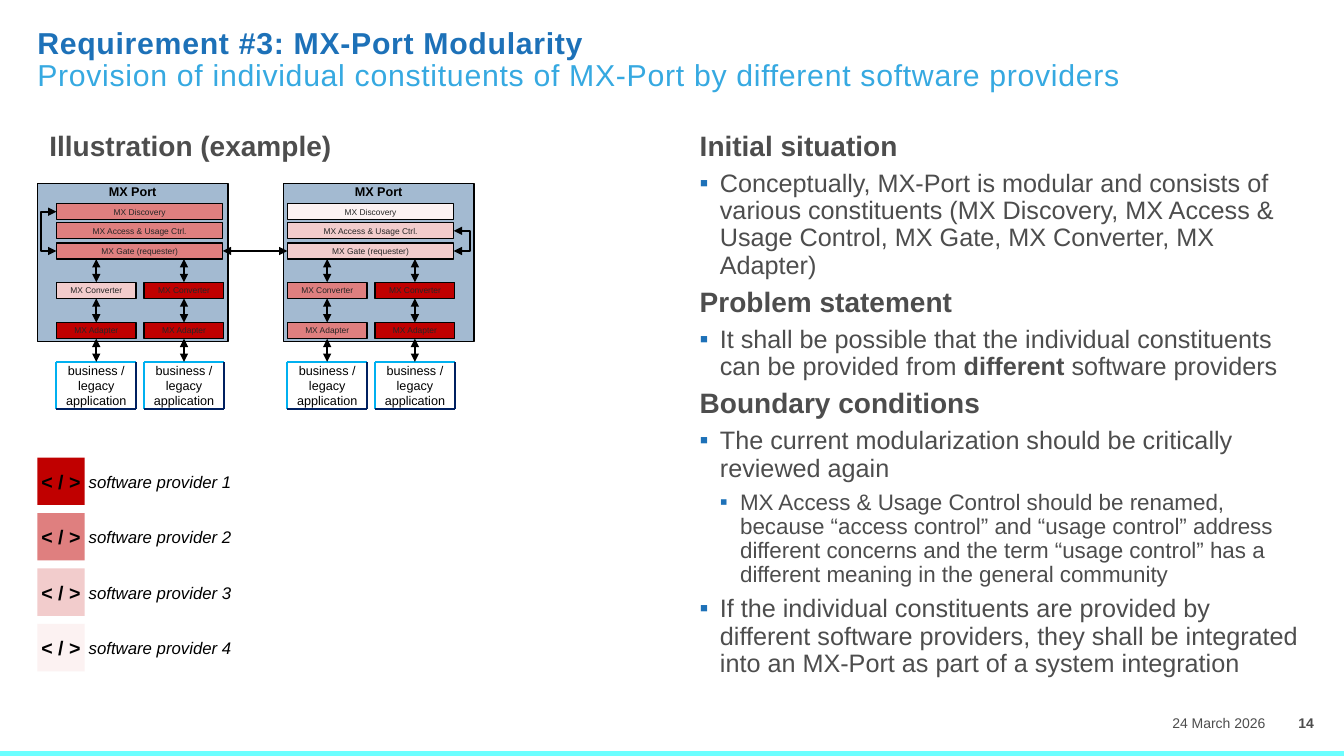
from pptx import Presentation
from pptx.dml.color import RGBColor
from pptx.enum.shapes import MSO_CONNECTOR, MSO_SHAPE
from pptx.enum.text import MSO_ANCHOR, MSO_AUTO_SIZE, PP_ALIGN
from pptx.oxml.ns import qn
from pptx.util import Inches, Pt
from lxml import etree

RECTANGLE = MSO_SHAPE.RECTANGLE
STRAIGHT = MSO_CONNECTOR.STRAIGHT
TOP, MIDDLE = MSO_ANCHOR.TOP, MSO_ANCHOR.MIDDLE
LEFT, CENTER, RIGHT = PP_ALIGN.LEFT, PP_ALIGN.CENTER, PP_ALIGN.RIGHT
NO_FIT = MSO_AUTO_SIZE.NONE

COLORS = {
    "title": "1D71B8", "subtitle": "36A9E1", "body": "4D4D4D", "label": "262626",
    "black": "000000", "port": "A3BAD1", "light edge": "00B0F0",
    "dark edge": "002060", "footer": "6CFFFF",
    1: "C00000", 2: "DF7F7F", 3: "F2CCCC", 4: "FCF2F2",
}
RGB = {name: RGBColor.from_string(value) for name, value in COLORS.items()}

deck = Presentation()
deck.slide_width, deck.slide_height = Inches(13.33), Inches(7.5)
page = deck.slides.add_slide(deck.slide_layouts[3])


def add_box(area, text, size, fill=None, outline=True, color="black", bold=False,
            italic=False, align=CENTER, anchor=MIDDLE, wrap=True):
    place = [Inches(value) for value in area]
    if fill is None:
        box = page.shapes.add_textbox(*place)
    else:
        box = page.shapes.add_shape(RECTANGLE, *place)
        box.shadow.inherit = False
        box.fill.solid()
        box.fill.fore_color.rgb = RGB[fill]
        if outline:
            box.line.color.rgb = RGB["black"]
            box.line.width = Pt(1)
        else:
            box.line.fill.background()
    frame = box.text_frame
    frame.margin_left = frame.margin_right = frame.margin_top = frame.margin_bottom = 0
    frame.word_wrap = wrap
    frame.vertical_anchor = anchor
    frame.text = text
    for para in frame.paragraphs:
        para.alignment = align
        font = para.runs[0].font
        font.name, font.size, font.bold, font.italic = "Arial", Pt(size), bold, italic
        font.color.rgb = RGB[color]
    return box


def add_line(points, color="black", width=1.5, arrows=False):
    points = [(Inches(x), Inches(y)) for x, y in points]
    if len(points) == 2:
        line = page.shapes.add_connector(STRAIGHT, *points[0], *points[1])
    else:
        builder = page.shapes.build_freeform(*points[0])
        builder.add_line_segments(points[1:], close=False)
        line = builder.convert_to_shape()
        line.fill.background()
    line.line.color.rgb = RGB[color]
    line.line.width = Pt(width)
    properties = line._element.spPr
    if arrows:
        for end in ("a:headEnd", "a:tailEnd"):
            etree.SubElement(properties.find(qn("a:ln")), qn(end), type="triangle")
    etree.SubElement(properties, qn("a:effectLst"))
    return line


add_line([(0, 7.48), (13.33, 7.48)], "footer", 4.5)

title, illustration, requirements = page.placeholders
title.left, title.top, title.width, title.height = [
    Inches(value) for value in (0.37, 0.28, 10.99, 0.79)]
frame = title.text_frame
frame.margin_left = frame.margin_right = frame.margin_top = frame.margin_bottom = 0
frame.vertical_anchor = TOP
frame.auto_size = NO_FIT
frame.text = ("Requirement #3: MX-Port Modularity\v"
              "Provision of individual constituents of MX-Port by different software providers")
para = frame.paragraphs[0]
para.alignment = LEFT
para.line_spacing = 0.9
for span, name in zip(para.runs, ("title", "subtitle")):
    span.font.name, span.font.size, span.font.bold = "Arial", Pt(21.6), name == "title"
    span.font.color.rgb = RGB[name]
    span._r.get_or_add_rPr().set("spc", "50")

illustration_items = [(0, ["Illustration (example)"])]
requirement_items = [
    (0, ["Initial situation"]),
    (1, ["Conceptually, MX-Port is modular and consists of various constituents "
         "(MX Discovery, MX Access & Usage Control, MX Gate, MX Converter, MX Adapter)"]),
    (0, ["Problem statement"]),
    (1, ["It shall be possible that the individual constituents can be provided from ",
         "different", " software providers"]),
    (0, ["Boundary conditions"]),
    (1, ["The current modularization should be critically reviewed again"]),
    (2, ["MX Access & Usage Control should be renamed, because “access control” and "
         "“usage control” address different concerns and the term “usage control” has a "
         "different meaning in the general community"]),
    (1, ["If the individual constituents are provided by different software providers, "
         "they shall be integrated into an MX-Port as part of a system integration"]),
]
for body, left, items in ((illustration, 0.37, illustration_items),
                          (requirements, 6.82, requirement_items)):
    body.left, body.top, body.width, body.height = [
        Inches(value) for value in (left, 1.23, 6.14, 5.59)]
    frame = body.text_frame
    frame.margin_left, frame.margin_top = Inches(0.12), Inches(0.08)
    frame.margin_right = frame.margin_bottom = Inches(0.04)
    frame.auto_size = NO_FIT
    for index, (level, texts) in enumerate(items):
        para = frame.add_paragraph() if index else frame.paragraphs[0]
        para.level = level
        properties = para._p.get_or_add_pPr()
        properties.set("marL", str(Inches(0.2) * level))
        properties.set("indent", str(-Inches(0.2) if level else 0))
        if level:
            bullet_color = etree.SubElement(properties, qn("a:buClr"))
            etree.SubElement(bullet_color, qn("a:srgbClr"), val=COLORS["title"])
            etree.SubElement(properties, qn("a:buChar"), char="▪")
        else:
            etree.SubElement(properties, qn("a:buNone"))
        para.line_spacing = 0.9
        para.space_before = Pt(6 if index else 0)
        for text in texts:
            span = para.add_run()
            span.text = text
            span.font.name, span.font.size = "Arial", Pt(20 - 2 * level)
            span.font.bold = level == 0 or text == "different"
            span.font.color.rgb = RGB["body"]

add_box((10.78, 6.98, 1.77, 0.38), "24 March 2026", 10, color="body", align=RIGHT)
add_box((12.69, 6.98, 0.53, 0.38), "14", 10, color="body", bold=True)

BAR_HEIGHT = 0.16
BAR_ROWS = [("MX Discovery", 2.02), ("MX Access & Usage Ctrl.", 2.21),
            ("MX Gate (requester)", 2.41)]
APP_TOP, APP_BOTTOM = 3.59, 4.06
ports = [
    (0.37, 0.56, (2, 2, 2), [(3, 1), (1, 1)]),
    (2.81, 2.85, (4, 3, 3), [(2, 2), (1, 1)]),
]
gates = []
for port_left, bar_left, bar_providers, columns in ports:
    add_box((port_left, 1.82, 1.89, 1.57), "MX Port", 9, "port", bold=True, anchor=TOP)
    for (name, top), provider in zip(BAR_ROWS, bar_providers):
        bar = add_box((bar_left, top, 1.65, BAR_HEIGHT), name, 6, provider, color="label")
    gates.append(bar)
    for column, (converter_provider, adapter_provider) in enumerate(columns):
        left = bar_left + 0.87 * column
        right, middle = left + 0.79, left + 0.395
        converter = add_box((left, 2.8, 0.79, BAR_HEIGHT), "MX Converter", 6,
                            converter_provider, color="label")
        adapter = add_box((left, 3.2, 0.79, BAR_HEIGHT), "MX Adapter", 6,
                          adapter_provider, color="label")
        application = add_box((left, APP_TOP, 0.79, 0.47),
                              "business / legacy\napplication", 9)
        for color, corner in (("light edge", (left, APP_TOP)),
                              ("dark edge", (right, APP_BOTTOM))):
            add_line([corner, (right, APP_TOP) if color == "light edge"
                      else (left, APP_BOTTOM)], color)
            add_line([corner, (left, APP_BOTTOM) if color == "light edge"
                      else (right, APP_TOP)], color)
        for lower, upper, start, end in ((converter, None, 2.8, 2.57),
                                         (adapter, converter, 3.2, 2.96),
                                         (application, adapter, 3.59, 3.36)):
            arrow = add_line([(middle, start), (middle, end)], arrows=True)
            arrow.begin_connect(lower, 0)
            if upper is not None:
                arrow.end_connect(upper, 2)

gate_link = add_line([(2.21, 2.49), (2.85, 2.49)], arrows=True)
gate_link.begin_connect(gates[0], 3)
gate_link.end_connect(gates[1], 1)
for edge, lane, top in ((0.56, 0.41, 2.1), (4.5, 4.66, 2.29)):
    add_line([(edge, top), (lane, top), (lane, 2.49), (edge, 2.49)], arrows=True)

for provider in range(1, 5):
    top = 4.54 + 0.55 * (provider - 1)
    add_box((0.37, top, 0.47, 0.47), "< / >", 14, provider, outline=False,
            bold=True, wrap=False)
    add_box((0.88, top + 0.12, 1.97, 0.24), f"software provider {provider}", 12,
            italic=True, align=LEFT)

deck.save("out.pptx")
